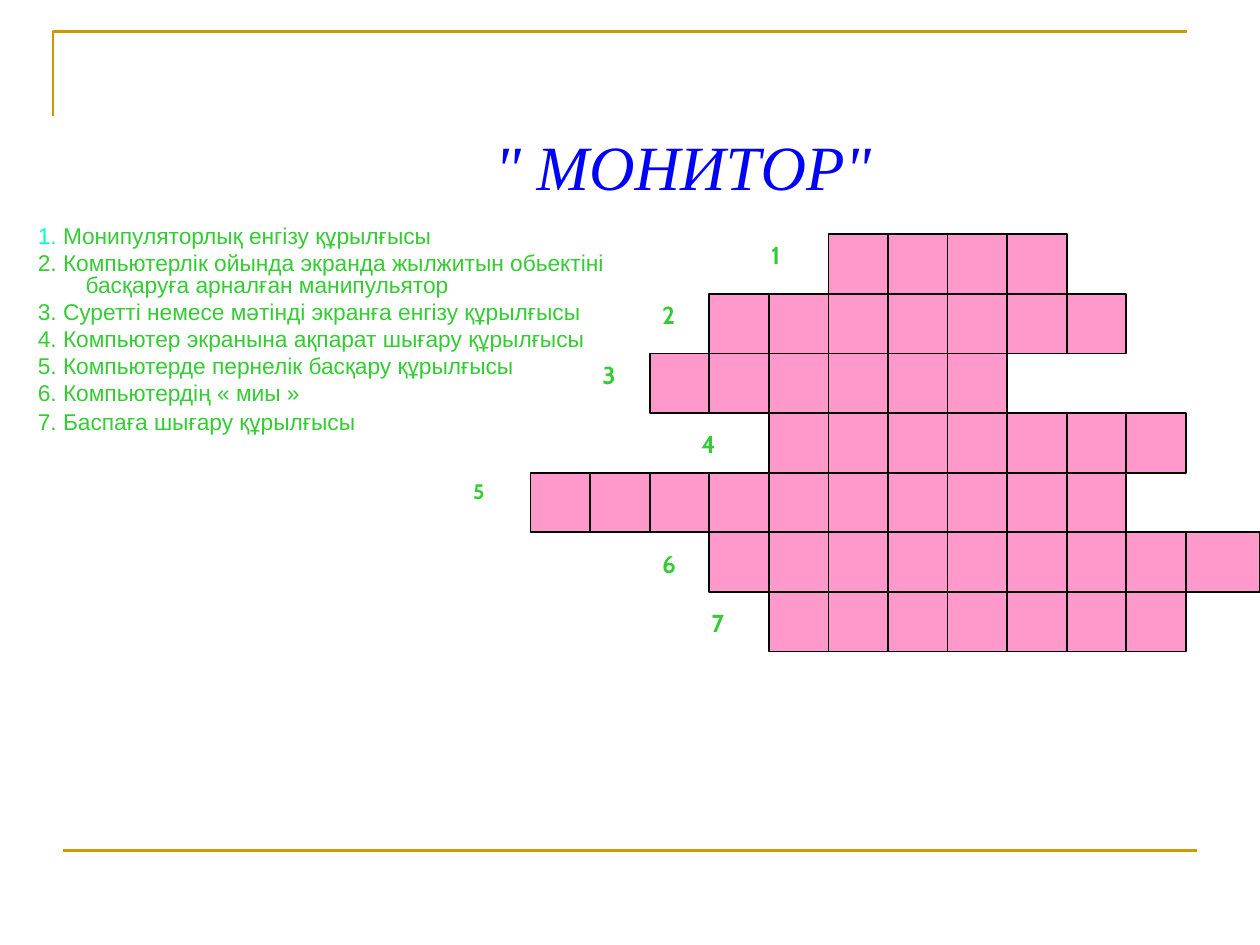
from pptx import Presentation
from pptx.dml.color import RGBColor
from pptx.enum.shapes import MSO_CONNECTOR, MSO_SHAPE
from pptx.enum.text import MSO_ANCHOR, MSO_AUTO_SIZE, PP_ALIGN
from pptx.oxml.ns import qn
from pptx.util import Inches, Pt
from lxml.etree import SubElement

GOLD = RGBColor(0xCC, 0x99, 0x00)
PINK = RGBColor(0xFF, 0x99, 0xCC)
GREEN = RGBColor(0x33, 0xCC, 0x33)
AQUA = RGBColor(0x00, 0xFF, 0xCC)
BLUE = RGBColor(0x00, 0x00, 0xFF)
BLACK = RGBColor(0x00, 0x00, 0x00)

CELL = 0.473
CLUES = [
    "Монипуляторлық енгізу құрылғысы",
    "Компьютерлік ойында экранда жылжитын обьектіні басқаруға арналған манипульятор",
    "Суретті немесе мәтінді экранға енгізу құрылғысы",
    "Компьютер экранына ақпарат шығару құрылғысы",
    "Компьютерде пернелік басқару құрылғысы",
    "Компьютердің « миы »",
    "Баспаға шығару құрылғысы",
]
# first column, cell count, number offset from the grid in cells (x, y), number size
WORDS = [
    (5, 4, 3.83, 0, 14),
    (3, 7, 2, 0, 14),
    (2, 6, 1, 0, 14),
    (4, 7, 2.66, 0.17, 14),
    (0, 10, -1.17, 0, 12),
    (3, 8, 2, 0.17, 14),
    (4, 7, 2.83, 0.17, 14),
]


def place(shape, left, top, width, height):
    shape.left, shape.top = Inches(left), Inches(top)
    shape.width, shape.height = Inches(width), Inches(height)


def add_frame(slide, left, top, width, corner_height, bottom):
    builder = slide.shapes.build_freeform(Inches(left), Inches(top + corner_height))
    builder.add_line_segments(
        [(Inches(left), Inches(top)), (Inches(left + width), Inches(top))], close=False)
    corner = builder.convert_to_shape()
    corner.fill.background()
    corner.shadow.inherit = False
    rule = slide.shapes.add_connector(
        MSO_CONNECTOR.STRAIGHT, Inches(0.5), Inches(bottom), Inches(0.5 + width), Inches(bottom))
    SubElement(rule.element.spPr, qn("a:effectLst"))
    for shape in (corner, rule):
        shape.line.color.rgb = GOLD
        shape.line.width = Pt(1.5)


def fill_title(title, *box):
    place(title, *box)
    frame = title.text_frame
    frame.text = '" МОНИТОР"'
    frame.auto_size = MSO_AUTO_SIZE.NONE
    frame.vertical_anchor = MSO_ANCHOR.MIDDLE
    paragraph = frame.paragraphs[0]
    paragraph.alignment = PP_ALIGN.CENTER
    font = paragraph.font
    font.name, font.size, font.italic = "Times New Roman", Pt(36), True
    font.color.rgb = BLUE


def fill_clues(body, *box):
    place(body, *box)
    frame = body.text_frame
    frame.auto_size = MSO_AUTO_SIZE.NONE
    for number, clue in enumerate(CLUES, 1):
        paragraph = frame.paragraphs[0] if number == 1 else frame.add_paragraph()
        paragraph.line_spacing = 0.8
        paragraph.space_before = Pt(4 if number == len(CLUES) else 3)
        paragraph.font.name, paragraph.font.size = "Arial", Pt(13)
        paragraph.font.color.rgb = GREEN
        properties = paragraph._p.get_or_add_pPr()
        properties.set("marL", str(Inches(0.38)))
        properties.set("indent", str(Inches(-0.38)))
        properties.insert_element_before(
            properties.makeelement(qn("a:buNone")), "a:tabLst", "a:defRPr", "a:extLst")
        label = paragraph.add_run()
        label.text = f"{number}. "
        if number == 1:
            label.font.color.rgb = AQUA
        paragraph.add_run().text = clue


def add_cell(slide, left, top, width=CELL):
    cell = slide.shapes.add_shape(
        MSO_SHAPE.RECTANGLE, Inches(left), Inches(top), Inches(width), Inches(CELL))
    cell.shadow.inherit = False
    cell.fill.solid()
    cell.fill.fore_color.rgb = PINK
    cell.line.color.rgb = BLACK
    cell.line.width = Pt(1)


def add_number(slide, text, left, top, size):
    box = slide.shapes.add_textbox(Inches(left), Inches(top), Inches(CELL), Inches(0.33))
    box.text_frame.word_wrap = True
    box.text_frame.text = text
    font = box.text_frame.paragraphs[0].font
    font.name, font.size, font.bold = "Cabin", Pt(size), True
    font.color.rgb = GREEN


def add_crossword(slide, left, top):
    add_cell(slide, 9.33, top + 5 * CELL, 0.67)
    for row, (first, count, number_x, number_y, size) in enumerate(WORDS):
        for column in range(first, first + count):
            add_cell(slide, left + column * CELL, top + row * CELL)
        add_number(slide, str(row + 1), left + number_x * CELL,
                   top + (row + number_y) * CELL, size)


def main():
    presentation = Presentation()
    presentation.slide_width, presentation.slide_height = Inches(10), Inches(7.5)
    slide = presentation.slides.add_slide(presentation.slide_layouts[1])
    add_frame(slide, 0.42, 0.25, 9, 0.67, 6.75)
    fill_title(slide.shapes.title, 3.42, 0.91, 4, 0.8)
    fill_clues(slide.placeholders[1], 0.2, 1.75, 4.73, 4.95)
    add_crossword(slide, 4.21, 1.86)
    presentation.save("out.pptx")


if __name__ == "__main__":
    main()
